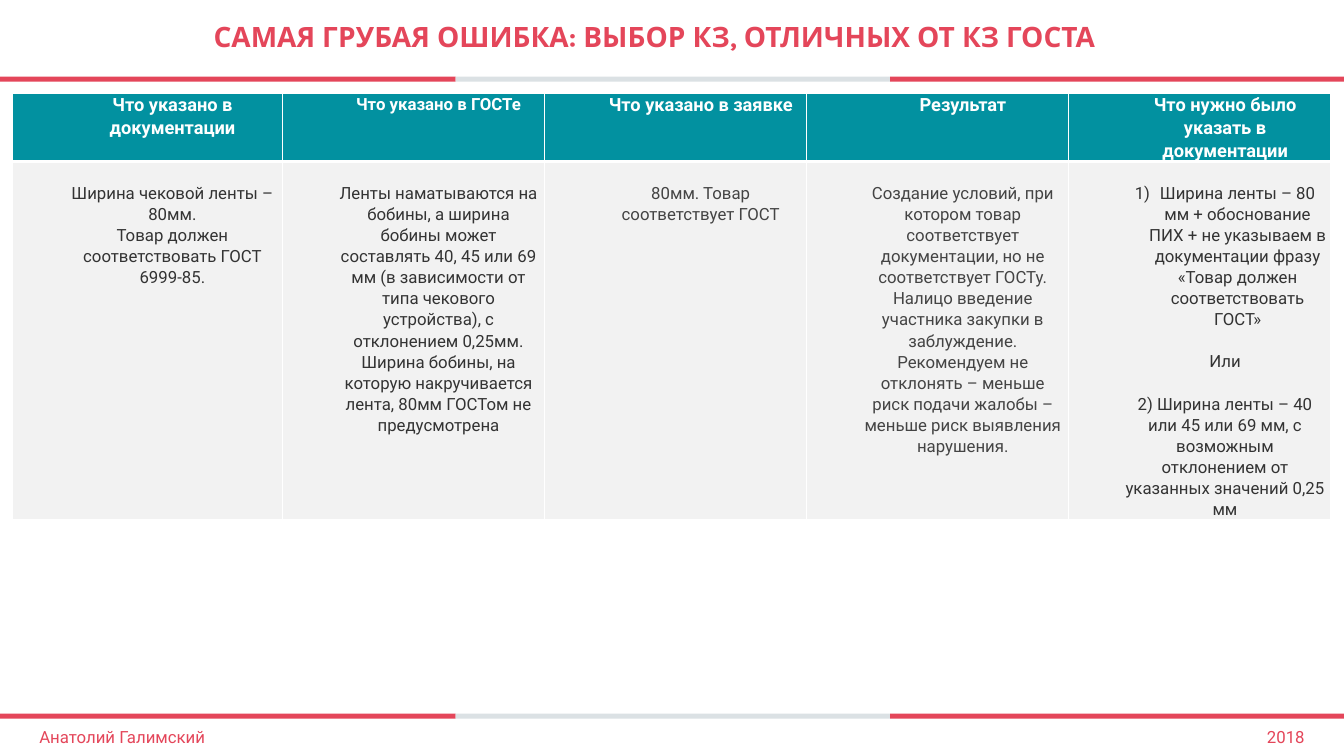
from lxml import etree
from pptx import Presentation
from pptx.dml.color import RGBColor
from pptx.enum.shapes import MSO_SHAPE
from pptx.enum.text import MSO_ANCHOR, MSO_AUTO_SIZE, PP_ALIGN
from pptx.oxml.ns import qn
from pptx.util import Inches, Pt

RECT = MSO_SHAPE.RECTANGLE
MIDDLE = MSO_ANCHOR.MIDDLE
NO_FIT = MSO_AUTO_SIZE.NONE
LEFT, CENTER, RIGHT = PP_ALIGN.LEFT, PP_ALIGN.CENTER, PP_ALIGN.RIGHT

COLORS = {
    "red": "E4465A", "silver": "DBE1E4", "teal": "0291A0", "light": "F2F2F2",
    "white": "FFFFFF", "dark": "333333", "gray": "444444",
}
COLUMNS = [
    ("Что указано в документации", 13, "dark",
     ["Ширина чековой ленты – 80мм.",
      "Товар должен соответствовать ГОСТ 6999-85."]),
    ("Что указано в ГОСТе", 12, "dark",
     ["Ленты наматываются на бобины, а ширина бобины может составлять 40, 45 "
      "или 69 мм (в зависимости от типа чекового устройства), с отклонением "
      "0,25мм. Ширина бобины, на которую накручивается лента, 80мм ГОСТом не "
      "предусмотрена"]),
    ("Что указано в заявке", 13, "gray",
     ["80мм. Товар соответствует ГОСТ"]),
    ("Результат", 13, "gray",
     ["Создание условий, при котором товар соответствует документации, но не "
      "соответствует ГОСТу. Налицо введение участника закупки в заблуждение. "
      "Рекомендуем не отклонять – меньше риск подачи жалобы – меньше риск "
      "выявления нарушения."]),
    ("Что нужно было указать в документации", 13, "dark",
     ["Ширина ленты – 80 мм + обоснование ПИХ + не указываем в документации "
      "фразу «Товар должен соответствовать ГОСТ»",
      "Или",
      "2) Ширина ленты – 40 или 45 или 69 мм, с возможным отклонением от "
      "указанных значений 0,25 мм"]),
]


def rgb(name):
    return RGBColor.from_string(COLORS[name])


def set_font(p, size, color, bold=False, name="Roboto"):
    p.font.name = name
    p.font.size = Pt(size)
    p.font.bold = bold
    p.font.color.rgb = rgb(color)


def add_stripe(s, top):
    edges = [0, 4.52, 8.83, 13.33]
    for left, right, color in zip(edges, edges[1:], ["red", "silver", "red"]):
        sp = s.shapes.add_shape(RECT, Inches(left), Inches(top),
                                Inches(right - left), Inches(0.05))
        sp.shadow.inherit = False
        sp.fill.solid()
        sp.fill.fore_color.rgb = rgb(color)
        sp.line.fill.background()


def set_title(s, text):
    sp = s.shapes.title
    sp.left, sp.top, sp.width, sp.height = map(Inches, (1.97, 0, 9.04, 0.76))
    tf = sp.text_frame
    tf.text = text
    tf.auto_size = NO_FIT
    tf.vertical_anchor = MIDDLE
    p = tf.paragraphs[0]
    p.alignment = CENTER
    p.line_spacing = 0.9
    set_font(p, 20, "red", True, "Karla")


def add_footer(s, text, left, width, align):
    tf = s.shapes.add_textbox(Inches(left), Inches(7.13),
                              Inches(width), Inches(0.36)).text_frame
    tf.word_wrap = True
    tf.margin_left = tf.margin_right = tf.margin_top = tf.margin_bottom = 0
    tf.vertical_anchor = MIDDLE
    p = tf.paragraphs[0]
    p.text = text
    p.alignment = align
    set_font(p, 12, "red")


def style_cell(cell, fill, top_margin, bottom_border):
    cell.margin_left = cell.margin_right = Inches(0.04)
    cell.margin_top, cell.margin_bottom = Inches(top_margin), 0
    tcPr = cell._tc.get_or_add_tcPr()
    for side, width in zip("LRTB", [1, 1, 1, bottom_border]):
        ln = etree.SubElement(tcPr, qn(f"a:ln{side}"), w=str(Pt(width)))
        solid = etree.SubElement(ln, qn("a:solidFill"))
        etree.SubElement(solid, qn("a:srgbClr"), val=COLORS["white"])
    cell.fill.solid()
    cell.fill.fore_color.rgb = rgb(fill)


def fill_cell(cell, texts, size, color, bold=False):
    tf = cell.text_frame
    tf.text = "\n".join(texts)
    for p in tf.paragraphs:
        p.alignment = CENTER
        p.line_spacing = 1.07
        p._p.get_or_add_pPr().set("marL", str(Inches(0.5)))
        set_font(p, size, color, bold)


def number_list(cell):
    first, *rest = cell.text_frame.paragraphs
    for p in rest:
        p.space_before = Pt(15)
    pPr = first._p.get_or_add_pPr()
    pPr.set("marL", str(Inches(0.75)))
    pPr.set("indent", str(Inches(-0.25)))
    bullet = etree.Element(qn("a:buAutoNum"), type="arabicParenR")
    pPr.find(qn("a:defRPr")).addprevious(bullet)


def add_comparison(s):
    table = s.shapes.add_table(2, len(COLUMNS), Inches(0.12), Inches(0.93),
                               Inches(13.08), Inches(4.17)).table
    table.rows[0].height = Inches(0.65)
    table.rows[1].height = Inches(3.52)
    for i, (heading, size, color, texts) in enumerate(COLUMNS):
        table.columns[i].width = Inches(2.6 if i else 2.68)
        head, body = table.cell(0, i), table.cell(1, i)
        style_cell(head, "teal", 0, 3)
        fill_cell(head, [heading], size, "white", True)
        style_cell(body, "light", 0.21, 1)
        fill_cell(body, texts, 12, color)
    number_list(body)


def main():
    prs = Presentation()
    prs.slide_width, prs.slide_height = Inches(13.33), Inches(7.5)
    s = prs.slides.add_slide(prs.slide_layouts[5])
    for top in (0.76, 7.08):
        add_stripe(s, top)
    add_comparison(s)
    set_title(s, "САМАЯ ГРУБАЯ ОШИБКА: ВЫБОР КЗ, ОТЛИЧНЫХ ОТ КЗ ГОСТА")
    add_footer(s, "Анатолий Галимский", 0.39, 8.43, LEFT)
    add_footer(s, "2018", 9.94, 3, RIGHT)
    prs.save("out.pptx")


if __name__ == "__main__":
    main()
